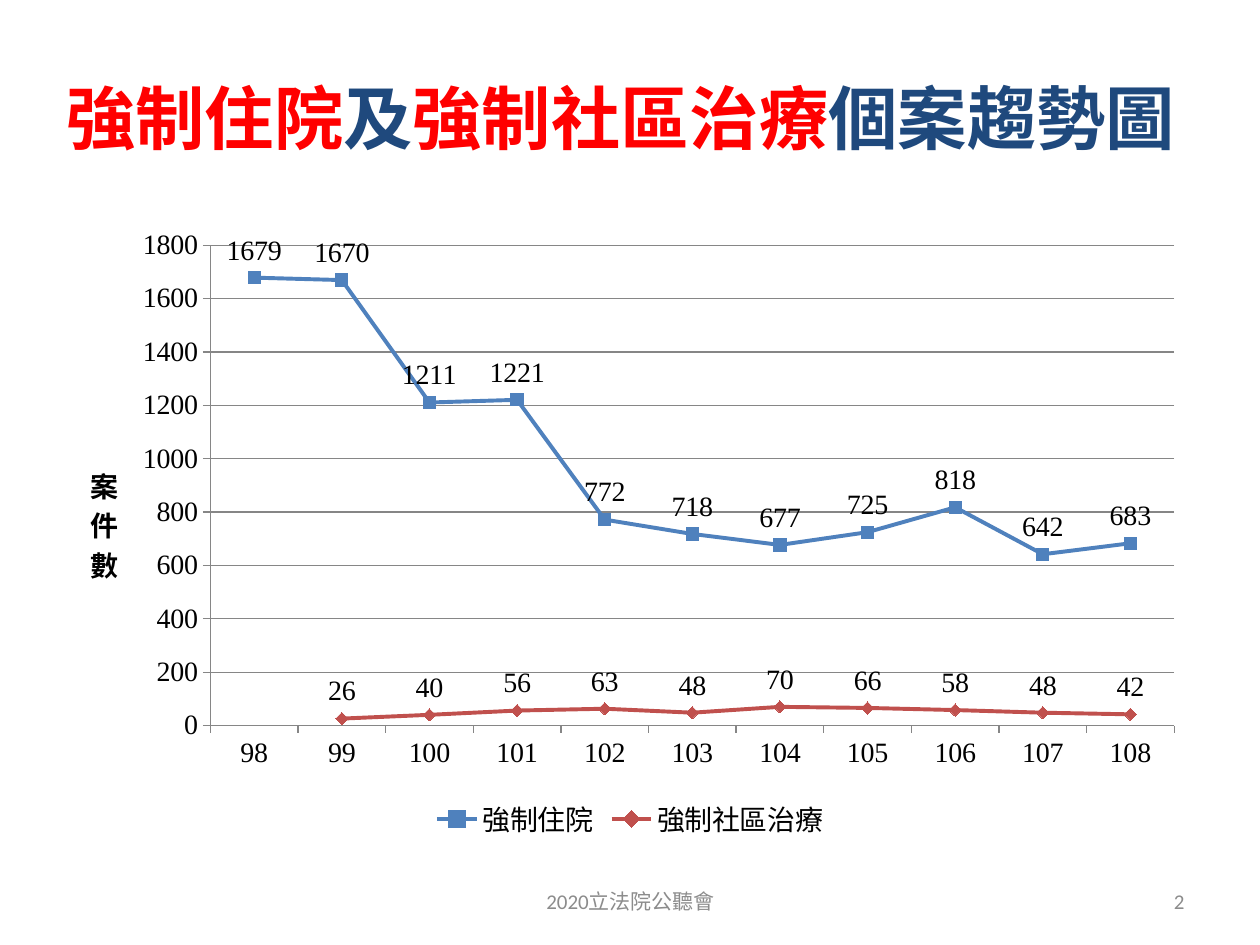
from lxml.etree import SubElement
from pptx import Presentation
from pptx.chart.data import CategoryChartData
from pptx.dml.color import RGBColor
from pptx.enum.chart import (XL_CHART_TYPE, XL_LABEL_POSITION, XL_LEGEND_POSITION,
                             XL_MARKER_STYLE, XL_TICK_MARK)
from pptx.enum.text import MSO_ANCHOR, PP_ALIGN
from pptx.oxml import parse_xml
from pptx.oxml.ns import nsdecls, qn
from pptx.util import Inches, Pt

COLS, ROWS = 200, 150
RED, NAVY, GREY, BLACK = "FF0000", "1F497D", "8C8C8C", "000000"
SANS, SERIF = "Noto Sans CJK SC", "Times New Roman"
YEARS = [str(year) for year in range(98, 109)]
CASES = [
    ("強制住院", "4F81BD", XL_MARKER_STYLE.SQUARE,
     [1679, 1670, 1211, 1221, 772, 718, 677, 725, 818, 642, 683]),
    ("強制社區治療", "C0504D", XL_MARKER_STYLE.DIAMOND,
     [None, 26, 40, 56, 63, 48, 70, 66, 58, 48, 42]),
]


def color(code):
    """Turn a hex string into a colour."""
    return RGBColor.from_string(code)


def place(deck, box):
    """Turn a box in grid columns and rows into slide lengths."""
    col, row = deck.slide_width / COLS, deck.slide_height / ROWS
    left, top, width, height = box
    return [round(n) for n in (left * col, top * row, width * col, height * row)]


def style(font, size, name, code, bold=False):
    """Set the look of a font."""
    font.size, font.bold = Pt(size), bold
    font.color.rgb = color(code)
    font.name = name


def add_text(deck, slide, box, runs, size, name, align, bold=False):
    """Write one line of coloured runs in a box."""
    frame = slide.shapes.add_textbox(*place(deck, box)).text_frame
    frame.word_wrap = True
    frame.vertical_anchor = MSO_ANCHOR.MIDDLE
    line = frame.paragraphs[0]
    line.alignment = align
    for text, code in runs:
        run = line.add_run()
        run.text = text
        style(run.font, size, name, code, bold)
        SubElement(run.font._element, qn("a:ea"), typeface=SANS)


def set_layout(part, index, **shares):
    """Pin a chart part at shares of the chart's size."""
    for old in part.findall(qn("c:layout")):
        part.remove(old)
    target = '<c:layoutTarget val="inner"/>' if "w" in shares else ""
    modes = '<c:xMode val="edge"/><c:yMode val="edge"/>'
    sizes = "".join(f'<c:{key} val="{val}"/>' for key, val in shares.items())
    part.insert(index, parse_xml(
        f'<c:layout {nsdecls("c")}><c:manualLayout>{target}{modes}{sizes}'
        '</c:manualLayout></c:layout>'))


def style_axes(chart):
    """Set scale, grid, ticks and the upright axis title."""
    axis = chart.value_axis
    axis.minimum_scale, axis.maximum_scale, axis.major_unit = 0, 1800, 200
    axis.has_major_gridlines = True
    lines = [axis.major_gridlines.format.line]
    for each in (axis, chart.category_axis):
        each.major_tick_mark = XL_TICK_MARK.OUTSIDE
        each.minor_tick_mark = XL_TICK_MARK.NONE
        lines.append(each.format.line)
    for line in lines:
        line.color.rgb = color("868686")
        line.width = Pt(0.75)
    frame = axis.axis_title.text_frame
    run = frame.paragraphs[0].add_run()
    run.text = "案件數"
    style(run.font, 16, SERIF, BLACK, True)
    body = frame._txBody.find(qn("a:bodyPr"))
    body.set("rot", "0")
    body.set("vert", "wordArtVertRtl")
    set_layout(axis.axis_title._element, 1, x=0.02, y=0.38)


def style_line(line, code, mark):
    """Set the stroke, marker and labels of a series."""
    line.smooth = False
    line.format.line.color.rgb = color(code)
    line.format.line.width = Pt(2.25)
    line.marker.style, line.marker.size = mark, 7
    line.marker.format.fill.solid()
    line.marker.format.fill.fore_color.rgb = color(code)
    line.marker.format.line.color.rgb = color(code)
    labels = line.data_labels
    labels.show_value = True
    labels.position = XL_LABEL_POSITION.ABOVE
    style(labels.font, 16, SERIF, BLACK)


def add_trend(deck, slide, box):
    """Draw the case trend chart in a box."""
    data = CategoryChartData()
    data.categories = YEARS
    for name, _, _, counts in CASES:
        data.add_series(name, counts)
    chart = slide.shapes.add_chart(
        XL_CHART_TYPE.LINE_MARKERS, *place(deck, box), data).chart
    style(chart.font, 16, SERIF, BLACK)
    chart.has_title = False
    chart.has_legend = True
    chart.legend.position = XL_LEGEND_POSITION.BOTTOM
    chart.legend.include_in_layout = False
    plot = chart.plots[0]
    plot.vary_by_categories = False
    for line, (_, code, mark, _) in zip(plot.series, CASES):
        style_line(line, code, mark)
    style_axes(chart)
    area = chart._chartSpace.find(qn("c:chart")).find(qn("c:plotArea"))
    set_layout(area, 0, x=0.13, y=0.04, w=0.85, h=0.77)


def main():
    """Build and save the slide."""
    deck = Presentation()
    deck.slide_width, deck.slide_height = Inches(10), Inches(7.5)
    slide = deck.slides.add_slide(deck.slide_layouts[6])
    title = [("強制住院", RED), ("及", NAVY), ("強制社區治療", RED), ("個案趨勢圖", NAVY)]
    add_text(deck, slide, (7, 6, 183, 25), title, 39.6, SANS, PP_ALIGN.CENTER, True)
    add_trend(deck, slide, (10, 35, 180, 99))
    for box, text, align in [
        ((68.4, 139, 63.4, 8), "2020立法院公聽會", PP_ALIGN.CENTER),
        ((143.4, 139, 46.6, 8), "2", PP_ALIGN.RIGHT),
    ]:
        add_text(deck, slide, box, [(text, GREY)], 12, "Calibri", align)
    deck.save("out.pptx")


if __name__ == "__main__":
    main()
